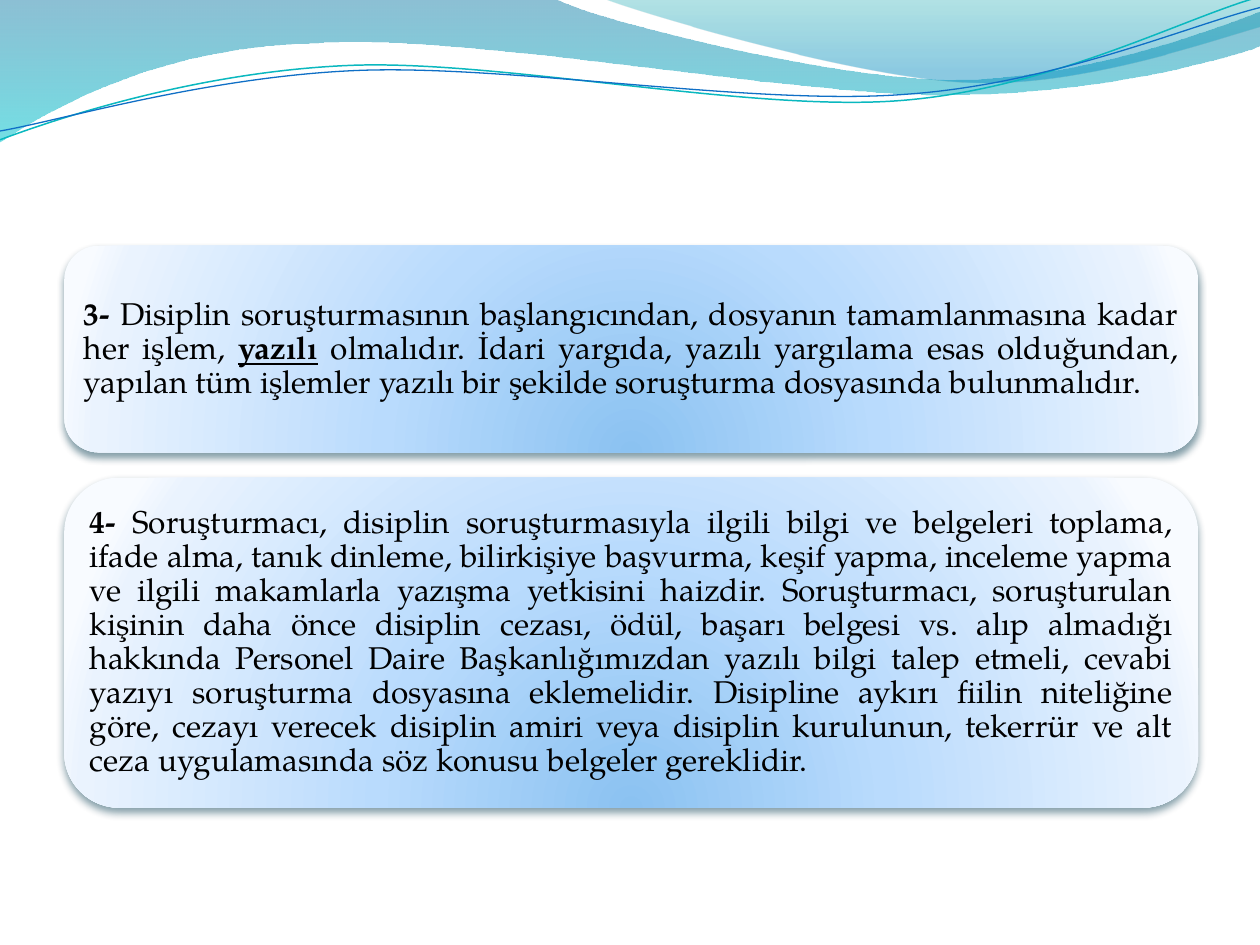
import pptx
import pptx.dml.color
import pptx.enum.shapes
import pptx.enum.text
import pptx.oxml
import pptx.oxml.ns
import pptx.util

Inches, Pt = pptx.util.Inches, pptx.util.Pt
RGB = pptx.dml.color.RGBColor.from_string
qn = pptx.oxml.ns.qn

THEME = {
    "font": "TeX Gyre Pagella",
    "size": 18,
    "text": "000000",
    "wave": [(0, "0074A1", 45), (100, "00C6CF", 55)],
    "crest": [(0, "00A1A9", 30), (80, "008BBF", 45)],
    "card": [(0, "8BC2F1", 100), (43, "B9DBFD", 100), (93, "EAF3FE", 100), (100, "F8FBFF", 100)],
    "shadow": ("00374C", 48),
    "teal": "0AB8BF",
    "blue": "0F6FC6",
}
DOWN = '<a:lin ang="5400000" scaled="1"/>'
GLOW = '<a:path path="circle"><a:fillToRect l="50000" t="130000" r="50000" b="-30000"/></a:path>'

BANDS = [
    ("wave", (0, 0), [
        (4.4, -0.01),
        (4.76, 0.17, 6.64, 0.63, 7.58, 0.63),
        (8.53, 0.63, 9.58, 0.26, 10, 0.09),
        (10.01, 0.36),
        (9.83, 0.44, 8.7, 0.76, 7.46, 0.75),
        (6.22, 0.75, 3.82, 0.28, 2.57, 0.34),
        (1.29, 0.36, 0.46, 0.83, -0.01, 1.13),
    ]),
    ("crest", (4.79, -0.01), [
        (5.09, 0.11, 6.82, 0.62, 7.69, 0.65),
        (8.56, 0.69, 9.61, 0.32, 10, 0.21),
        (10, 0),
    ]),
]
STRANDS = [
    ("teal", 0.85, (0, 1.11), [
        (0.48, 0.93, 1.58, 0.57, 2.77, 0.52),
        (3.95, 0.47, 5.93, 0.89, 7.13, 0.8),
        (8.33, 0.71, 9.38, 0.15, 9.98, -0.02),
    ]),
    ("blue", 0.75, (0, 1.04), [
        (0.47, 0.96, 1.64, 0.61, 2.83, 0.56),
        (4.03, 0.51, 5.97, 0.84, 7.17, 0.75),
        (8.36, 0.67, 9.41, 0.21, 10, 0.06),
    ]),
]
CARD_LEFT, CARD_TOP, CARD_WIDTH, CARD_GAP = 0.51, 1.95, 9, 0.2
CARD_MARGIN = Pt(5.4)
CARDS = [
    (1.64, [
        ("3- ", "b"),
        ("Disiplin soruşturmasının başlangıcından, dosyanın tamamlanmasına kadar her işlem, ", ""),
        ("yazılı", "bu"),
        (" olmalıdır. İdari yargıda, yazılı yargılama esas olduğundan, yapılan tüm işlemler "
         "yazılı bir şekilde soruşturma dosyasında bulunmalıdır.", ""),
    ]),
    (2.62, [
        ("4-", "b"),
        (" Soruşturmacı, disiplin soruşturmasıyla ilgili bilgi ve belgeleri toplama, ifade alma, "
         "tanık dinleme, bilirkişiye başvurma, keşif yapma, inceleme yapma ve ilgili makamlarla "
         "yazışma yetkisini haizdir. Soruşturmacı, soruşturulan kişinin daha önce disiplin cezası, "
         "ödül, başarı belgesi vs. alıp almadığı hakkında Personel Daire Başkanlığımızdan yazılı "
         "bilgi talep etmeli, cevabi yazıyı soruşturma dosyasına eklemelidir. Disipline aykırı "
         "fiilin niteliğine göre, cezayı verecek disiplin amiri veya disiplin kurulunun, tekerrür "
         "ve alt ceza uygulamasında söz konusu belgeler gereklidir.", ""),
    ]),
]


def color_xml(color, opacity):
    return f'<a:srgbClr val="{color}"><a:alpha val="{opacity * 1000}"/></a:srgbClr>'


def element(xml):
    return pptx.oxml.parse_xml(xml.replace(">", f' {pptx.oxml.ns.nsdecls("a")}>', 1))


def set_gradient(s, stops, direction):
    s.fill.background()
    gs = "".join(f'<a:gs pos="{pos * 1000}">{color_xml(c, o)}</a:gs>' for pos, c, o in stops)
    spPr = s._element.spPr
    spPr.replace(spPr.find(qn("a:noFill")),
                 element(f"<a:gradFill><a:gsLst>{gs}</a:gsLst>{direction}</a:gradFill>"))


def add_outline(slide, start, segments, close):
    points = [(Inches(x), Inches(y)) for seg in [start, *segments]
              for x, y in zip(seg[::2], seg[1::2])]
    builder = slide.shapes.build_freeform(*points[0])
    builder.add_line_segments(points[1:], close=close)
    s = builder.convert_to_shape()
    s.shadow.inherit = False
    steps = iter(list(s._element.iter(qn("a:lnTo"))))
    for seg in segments:
        first, *rest = [next(steps) for _ in range(len(seg) // 2)]
        if rest:
            first.tag = qn("a:cubicBezTo")
            for step in rest:
                first.append(step[0])
                step.getparent().remove(step)
    return s


def add_card(slide, top, height, runs):
    s = slide.shapes.add_shape(pptx.enum.shapes.MSO_SHAPE.ROUNDED_RECTANGLE, Inches(CARD_LEFT),
                               Inches(top), Inches(CARD_WIDTH), Inches(height))
    set_gradient(s, THEME["card"], GLOW)
    s.line.fill.background()
    s.shadow.inherit = False
    s._element.spPr.find(qn("a:effectLst")).append(element(
        f'<a:outerShdw blurRad="{Pt(4.5)}" dist="{Pt(3)}" dir="5400000" rotWithShape="0">'
        f'{color_xml(*THEME["shadow"])}</a:outerShdw>'))
    tf = s.text_frame
    tf.word_wrap = True
    tf.vertical_anchor = pptx.enum.text.MSO_ANCHOR.MIDDLE
    tf.margin_left = tf.margin_right = tf.margin_top = tf.margin_bottom = CARD_MARGIN
    p = tf.paragraphs[0]
    p.alignment = pptx.enum.text.PP_ALIGN.JUSTIFY
    p.line_spacing = 0.9
    p.font.name, p.font.size = THEME["font"], Pt(THEME["size"])
    p.font.color.rgb = RGB(THEME["text"])
    for text, style in runs:
        r = p.add_run()
        r.text = text
        r.font.bold = "b" in style
        r.font.underline = "u" in style


def main():
    """Build the slide with its wave header and two text cards."""
    prs = pptx.Presentation()
    prs.slide_width, prs.slide_height = Inches(10), Inches(7.5)
    slide = prs.slides.add_slide(prs.slide_layouts[6])
    for name, start, segments in BANDS:
        s = add_outline(slide, start, segments, True)
        set_gradient(s, THEME[name], DOWN)
        s.line.fill.background()
    for name, width, start, segments in STRANDS:
        s = add_outline(slide, start, segments, False)
        s.fill.background()
        s.line.color.rgb = RGB(THEME[name])
        s.line.width = Pt(width)
    top = CARD_TOP
    for height, runs in CARDS:
        add_card(slide, top, height, runs)
        top += height + CARD_GAP
    prs.save("out.pptx")


if __name__ == "__main__":
    main()
